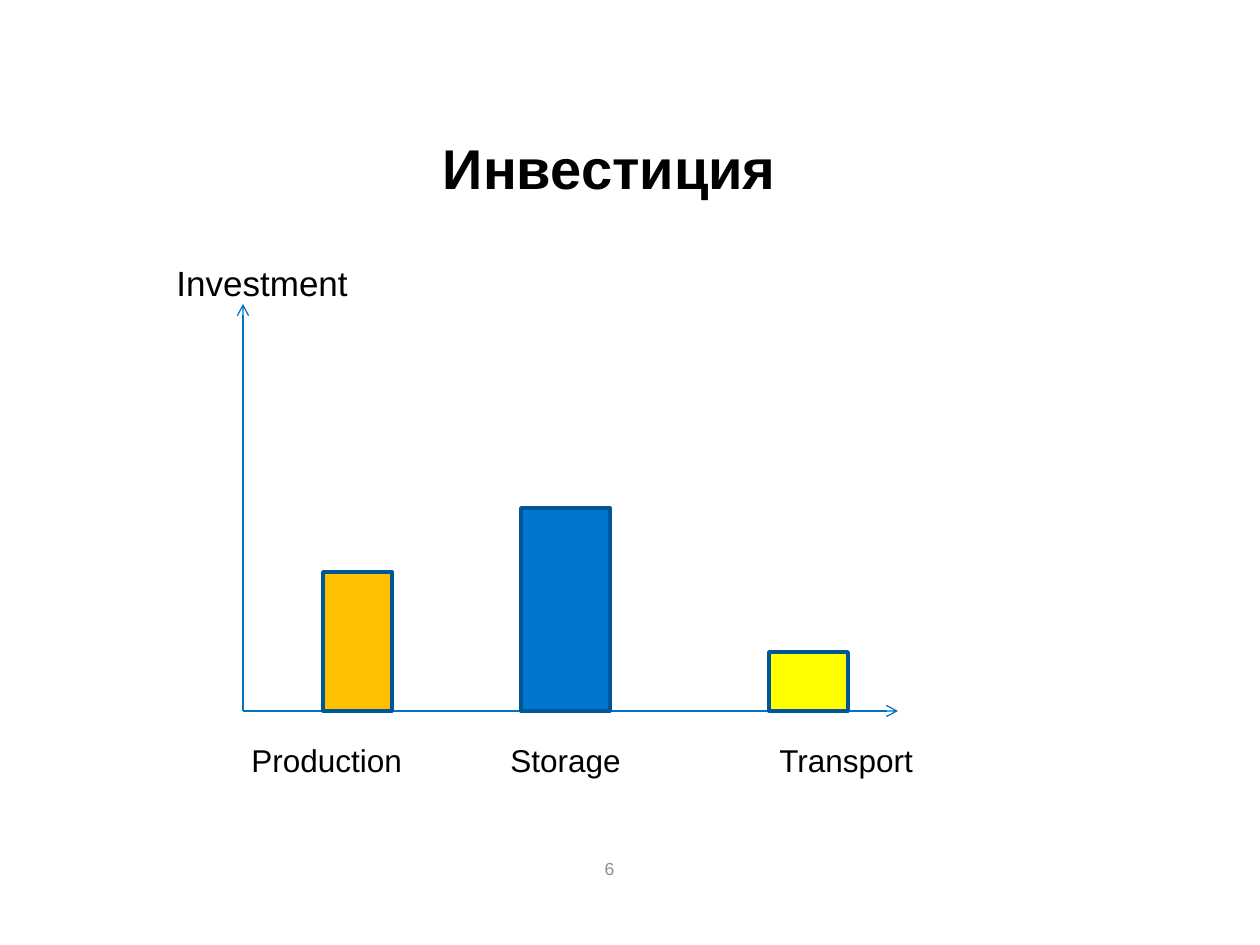
import lxml.etree
import pptx
import pptx.util
import pptx.dml.color
import pptx.enum.shapes
import pptx.enum.text
import pptx.oxml.ns

RGBColor = pptx.dml.color.RGBColor
BLACK = RGBColor(0x00, 0x00, 0x00)
GREY = RGBColor(0x8C, 0x8C, 0x8C)
AXIS_BLUE = RGBColor(0x00, 0x73, 0xC8)
EDGE_BLUE = RGBColor(0x00, 0x57, 0x97)
ORANGE = RGBColor(0xFF, 0xC0, 0x00)
BLUE = RGBColor(0x00, 0x76, 0xCC)
YELLOW = RGBColor(0xFF, 0xFF, 0x00)

ALIGN = pptx.enum.text.PP_ALIGN
TITLE = "Инвестиция"
AXIS_TITLE = "Investment"
PAGE_NUMBER = "6"
ORIGIN = (243, 711)
AXIS_ENDS = [(898, 711), (243, 304)]
LABEL_TOP, LABEL_HEIGHT = 735, 50
BARS = [
    ("Production", 323, 69, 139, ORANGE, 239, 178),
    ("Storage", 521, 89, 203, BLUE, 498, 137),
    ("Transport", 769, 79, 59, YELLOW, 767, 160),
]


def px(*lengths):
    return [pptx.util.Emu(round(length * 914400 / 126)) for length in lengths]


def write(box, text, size, color, align):
    box.text_frame.text = text
    para = box.text_frame.paragraphs[0]
    para.alignment = align
    para.font.name = "Arial"
    para.font.size = pptx.util.Pt(size)
    para.font.color.rgb = color
    return para


def add_label(page, text, place, size, color=BLACK, align=ALIGN.LEFT, wrap=True):
    box = page.shapes.add_textbox(*px(*place))
    box.text_frame.word_wrap = wrap
    write(box, text, size, color, align)


def add_axis(page, end):
    axis = page.shapes.add_connector(
        pptx.enum.shapes.MSO_CONNECTOR.STRAIGHT, *px(*ORIGIN, *end))
    axis.line.color.rgb = AXIS_BLUE
    axis.line.width = pptx.util.Pt(0.75)
    qn = pptx.oxml.ns.qn
    properties = axis.element.spPr
    line = properties.find(qn("a:ln"))
    lxml.etree.SubElement(line, qn("a:tailEnd"), type="arrow")
    lxml.etree.SubElement(properties, qn("a:effectLst"))


def add_bar(page, left, width, height, color):
    bar = page.shapes.add_shape(
        pptx.enum.shapes.MSO_SHAPE.RECTANGLE,
        *px(left, ORIGIN[1] - height, width, height))
    bar.shadow.inherit = False
    bar.fill.solid()
    bar.fill.fore_color.rgb = color
    bar.line.color.rgb = EDGE_BLUE
    bar.line.width = pptx.util.Pt(2)


def main():
    deck = pptx.Presentation()
    deck.slide_width, deck.slide_height = px(1260, 945)
    page = deck.slides.add_slide(deck.slide_layouts.get_by_name("Title Only"))

    title = page.shapes.title
    title.left, title.top, title.width, title.height = px(74, 66, 1071, 203)
    title.text_frame.vertical_anchor = pptx.enum.text.MSO_ANCHOR.MIDDLE
    write(title, TITLE, 32, BLACK, ALIGN.CENTER).font.bold = True

    add_label(page, AXIS_TITLE, (164, 255, 882, 50), 20)
    add_label(page, PAGE_NUMBER, (517, 852, 185, 50), 10, GREY, ALIGN.CENTER)

    for end in AXIS_ENDS:
        add_axis(page, end)
    for name, left, width, height, color, label_left, label_width in BARS:
        add_bar(page, left, width, height, color)
        place = (label_left, LABEL_TOP, label_width, LABEL_HEIGHT)
        add_label(page, name, place, 18, wrap=False)

    deck.save("out.pptx")


if __name__ == "__main__":
    main()
